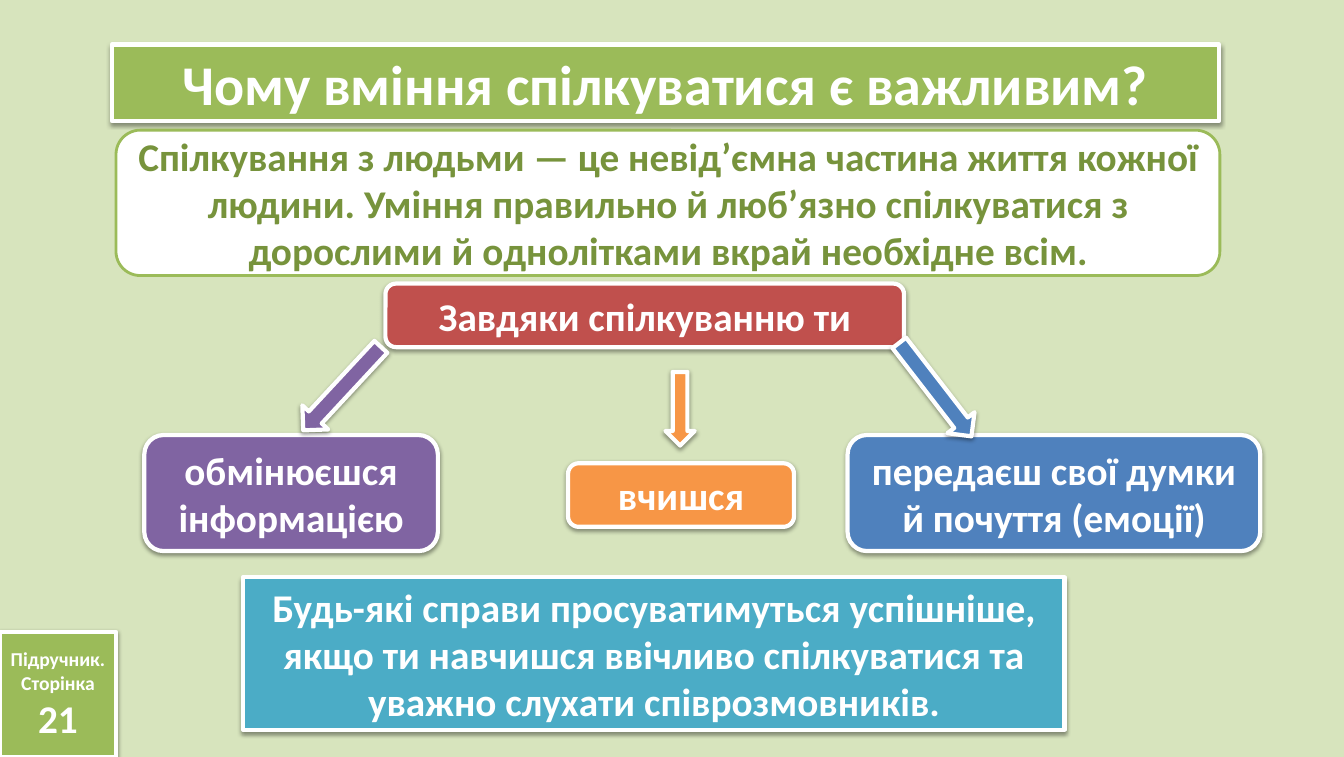
from lxml import etree
from pptx import Presentation
from pptx.dml.color import RGBColor
from pptx.enum.shapes import MSO_SHAPE
from pptx.enum.text import MSO_ANCHOR, MSO_AUTO_SIZE, PP_ALIGN
from pptx.oxml import parse_xml
from pptx.oxml.ns import nsdecls, qn
from pptx.util import Inches, Pt

RECTANGLE = MSO_SHAPE.RECTANGLE
ROUNDED = MSO_SHAPE.ROUNDED_RECTANGLE
ARROW = MSO_SHAPE.RIGHT_ARROW
CENTER = PP_ALIGN.CENTER
MIDDLE = MSO_ANCHOR.MIDDLE
NO_AUTOFIT = MSO_AUTO_SIZE.NONE
TITLE_ONLY = 5

FONT = "Calibri"
WHITE, BACKGROUND = "FFFFFF", "D7E4BD"
GREEN, DARK_GREEN = "9BBB59", "77933C"
RED, PURPLE, ORANGE, BLUE, TEAL = "C0504D", "8064A2", "F79646", "4F81BD", "4BACC6"


def color(value):
    """Turn a hex string into a colour."""
    return RGBColor.from_string(value)


def style_panel(shape, fill, line=WHITE, width=3, shadow=True):
    """Give a shape its fill, outline and optional soft shadow."""
    shape.fill.solid()
    shape.fill.fore_color.rgb = color(fill)
    shape.line.color.rgb = color(line)
    shape.line.width = Pt(width)
    shape.shadow.inherit = False
    if shadow:
        effects = shape._element.spPr.find(qn("a:effectLst"))
        outer = etree.SubElement(effects, qn("a:outerShdw"), blurRad=str(Pt(3.1)),
                                 dist=str(Pt(1.6)), dir="5400000", rotWithShape="0")
        black = etree.SubElement(outer, qn("a:srgbClr"), val="000000")
        etree.SubElement(black, qn("a:alpha"), val="38000")


def write_text(shape, text, sizes=(28,), font_color=WHITE):
    """Write centred bold text, one size for each line of the string."""
    frame = shape.text_frame
    frame.text = text
    frame.word_wrap = True
    frame.auto_size = NO_AUTOFIT
    frame.vertical_anchor = MIDDLE
    for paragraph, size in zip(frame.paragraphs, sizes):
        paragraph.alignment = CENTER
        paragraph.font.name = FONT
        paragraph.font.size = Pt(size)
        paragraph.font.bold = True
        paragraph.font.color.rgb = color(font_color)


def add_panel(slide, kind, box, fill, text, sizes=(28,), font_color=WHITE, **outline):
    """Add a filled shape with text in the given box."""
    shape = slide.shapes.add_shape(kind, *map(Inches, box))
    style_panel(shape, fill, **outline)
    write_text(shape, text, sizes, font_color)


def add_title(slide, box, text):
    """Move the title placeholder and make it a rounded banner."""
    title = slide.shapes.title
    title.left, title.top, title.width, title.height = map(Inches, box)
    geometry = f'<a:prstGeom {nsdecls("a")} prst="roundRect"><a:avLst/></a:prstGeom>'
    title._element.spPr.append(parse_xml(geometry))
    style_panel(title, GREEN)
    write_text(title, text, (40,))


def add_arrow(slide, center, length, thickness, angle, fill):
    """Add a block arrow turned about its centre."""
    x, y = center
    box = x - length / 2, y - thickness / 2, length, thickness
    arrow = slide.shapes.add_shape(ARROW, *map(Inches, box))
    arrow.rotation = angle
    style_panel(arrow, fill)


def add_benefits(slide, box):
    """Place the red heading, its three outcomes and the arrows to them."""
    left, top, width, height = box
    heading_box = left + 2.39, top, 5.14, 0.63
    add_panel(slide, ROUNDED, heading_box, RED, "Завдяки спілкуванню ти")
    bottom = top + height
    outcomes = [
        ("обмінюєшся інформацією", PURPLE, 0, 2.91, 1.15, 0),
        ("вчишся", ORANGE, 4.2, 2.24, 0.63, 0.24),
        ("передаєш свої думки й почуття (емоції)", BLUE, width - 4.09, 4.09, 1.15, 0),
    ]
    for text, fill, offset, panel_width, panel_height, lift in outcomes:
        panel_top = bottom - lift - panel_height
        panel_box = left + offset, panel_top, panel_width, panel_height
        add_panel(slide, ROUNDED, panel_box, fill, text)
    arrows = [
        (PURPLE, 1.96, 1.04, 1.13, 0.35, 132.9),
        (ORANGE, 5.31, 1.24, 0.73, 0.29, 90),
        (BLUE, 7.84, 1.05, 1.17, 0.34, 52.3),
    ]
    for fill, x, y, length, thickness, angle in arrows:
        add_arrow(slide, (left + x, top + y), length, thickness, angle, fill)


def main():
    """Build the slide and save it."""
    presentation = Presentation()
    presentation.slide_width = Inches(13.32)
    presentation.slide_height = Inches(7.5)
    slide = presentation.slides.add_slide(presentation.slide_layouts[TITLE_ONLY])
    slide.background.fill.solid()
    slide.background.fill.fore_color.rgb = color(BACKGROUND)

    add_title(slide, (1.11, 0.44, 10.97, 0.76), "Чому вміння спілкуватися є важливим?")
    add_panel(slide, RECTANGLE, (0, 6.26, 1.15, 1.24), GREEN,
              "Підручник.\nСторінка\n21", sizes=(14, 14, 28))
    add_benefits(slide, (1.43, 2.81, 11.06, 2.65))
    add_panel(slide, ROUNDED, (1.15, 1.29, 10.94, 1.44), WHITE,
              "Спілкування з людьми — це невід’ємна частина життя кожної людини. "
              "Уміння правильно й люб’язно спілкуватися з дорослими й однолітками "
              "вкрай необхідне всім.",
              font_color=DARK_GREEN, line=GREEN, width=2, shadow=False)
    add_panel(slide, RECTANGLE, (2.41, 5.72, 8.14, 1.51), TEAL,
              "Будь-які справи просуватимуться успішніше, якщо ти навчишся ввічливо "
              "спілкуватися та уважно слухати співрозмовників.")
    presentation.save("out.pptx")


if __name__ == "__main__":
    main()
